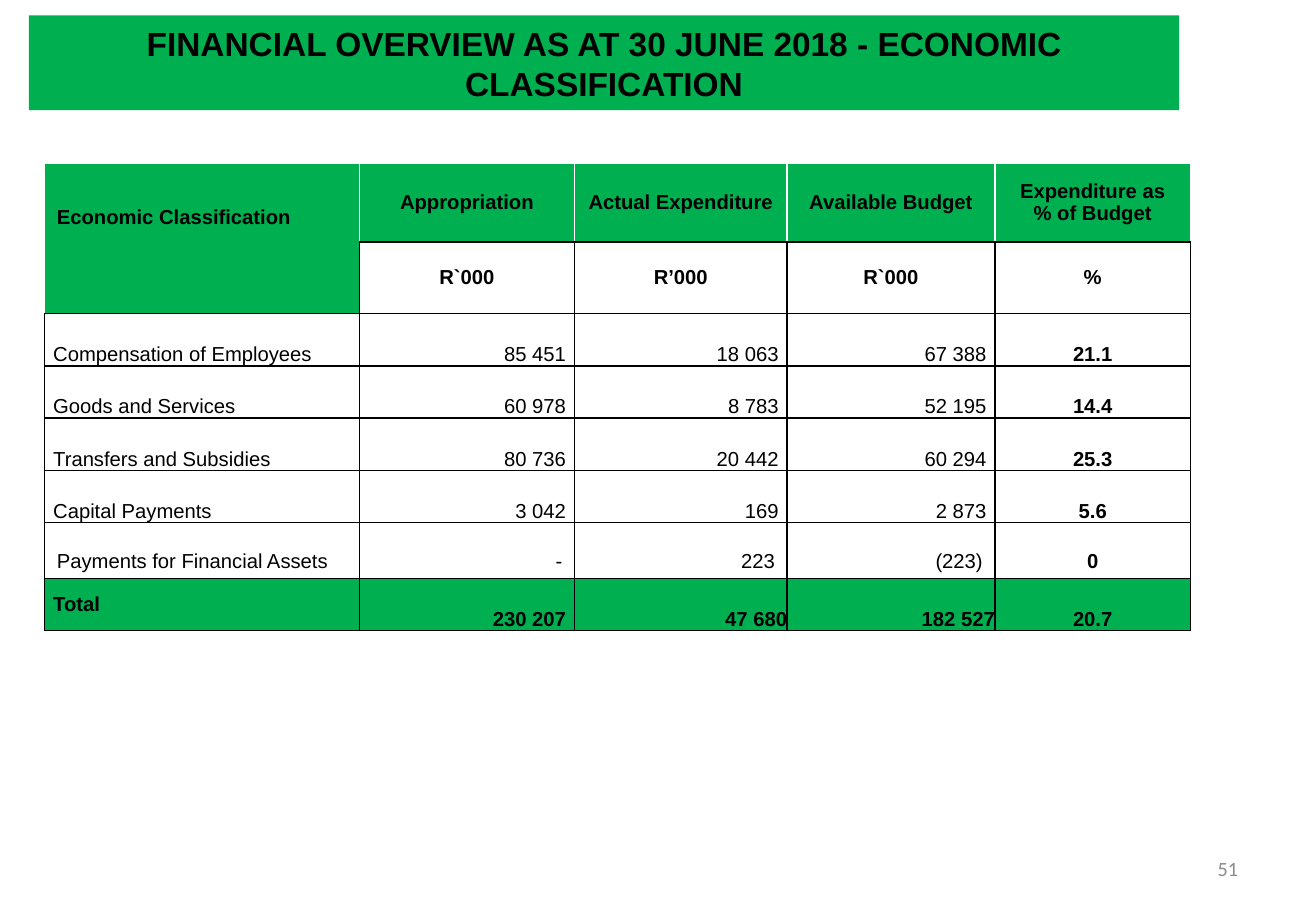
from lxml import etree
from pptx import Presentation, util as u
from pptx.dml.color import RGBColor
from pptx.enum import shapes, text
from pptx.oxml.ns import qn

WIDTH, HEIGHT = 10.83, 7.5
COLORS = {"green": "00B050", "black": "000000", "white": "FFFFFF", "gray": "8C8C8C"}
COLUMNS = [2.59, 1.77, 1.75, 1.71, 1.61]
ROWS = [0.65, 0.59, 0.43, 0.43, 0.43, 0.43, 0.46, 0.43]
HEADER, UNITS, ASSETS, TOTAL = 0, 1, 6, 7
BUDGET = [
    ["Economic Classification", "Appropriation", "Actual Expenditure",
     "Available Budget", "Expenditure as\n% of Budget"],
    ["", "R`000", "R’000", "R`000", "%"],
    ["Compensation of Employees", "85 451", "18 063", "67 388", "21.1"],
    ["Goods and Services", "60 978", "8 783", "52 195", "14.4"],
    ["Transfers and Subsidies", "80 736", "20 442", "60 294", "25.3"],
    ["Capital Payments", "3 042", "169", "2 873", "5.6"],
    ["Payments for Financial Assets", "-", "223", "(223)", "0"],
    ["Total", "230 207", "47 680", "182 527", "20.7"],
]
ALIGN, ANCHOR = text.PP_ALIGN, text.MSO_ANCHOR


def color(name):
    """Return a named colour."""
    return RGBColor.from_string(COLORS[name])


def place(left, top, width, height):
    """Turn shares of the slide into lengths."""
    return [u.Inches(share * side) for share, side in
            zip((left, top, width, height), (WIDTH, HEIGHT, WIDTH, HEIGHT))]


def write(frame, words, size, align, font="Arial", bold=False, ink="black"):
    """Write one paragraph, a run for each line."""
    para = frame.paragraphs[0]
    para.alignment = align
    for index, line in enumerate(words.split("\n")):
        if index:
            para.add_line_break()
        span = para.add_run()
        span.text = line
        span.font.name, span.font.size, span.font.bold = font, u.Pt(size), bold
        span.font.color.rgb = color(ink)


def add_title(page, words):
    """Add the green title band."""
    band = page.shapes.add_shape(shapes.MSO_SHAPE.RECTANGLE,
                                 *place(0.022, 0.017, 0.874, 0.104))
    band.shadow.inherit = False
    band.fill.solid()
    band.fill.fore_color.rgb = color("green")
    band.line.fill.background()
    band.text_frame.word_wrap = True
    band.text_frame.vertical_anchor = ANCHOR.MIDDLE
    write(band.text_frame, words, 19.8, ALIGN.CENTER, bold=True)


def add_page_number(page, number):
    """Add the page number at the lower right."""
    box = page.shapes.add_textbox(*place(0.717, 0.927, 0.233, 0.053))
    box.text_frame.word_wrap = True
    box.text_frame.vertical_anchor = ANCHOR.MIDDLE
    write(box.text_frame, number, 12, ALIGN.RIGHT, "Calibri", ink="gray")


def add_borders(cell, row, col):
    """Rule a cell in black, with white around the header."""
    for side in "LRTB":
        white = (row == HEADER and side != "B") or (
            row == UNITS and col == 0 and side == "L")
        line = etree.SubElement(cell._tc.get_or_add_tcPr(), qn(f"a:ln{side}"),
                                w=str(u.Pt(1)))
        fill = etree.SubElement(line, qn("a:solidFill"))
        etree.SubElement(fill, qn("a:srgbClr"),
                         val=COLORS["white" if white else "black"])


def set_margins(cell, row, col):
    """Set the insets of a cell."""
    side, bottom = 0.07, 0
    if row == HEADER and col == 0:
        side, bottom = 0.1, 0.35
    elif row == ASSETS:
        side, bottom = 0.1, 0.05
    elif row == TOTAL and col > 1:
        side = 0
    cell.margin_left = cell.margin_right = u.Inches(side)
    cell.margin_top, cell.margin_bottom = 0, u.Inches(bottom)


def fill_cell(cell, row, col, words):
    """Rule, fill and write one table cell."""
    add_borders(cell, row, col)
    if row in (HEADER, TOTAL):
        cell.fill.solid()
        cell.fill.fore_color.rgb = color("green")
    else:
        cell.fill.background()
    set_margins(cell, row, col)
    middle = row <= UNITS or (row == TOTAL and col == 0)
    cell.vertical_anchor = ANCHOR.MIDDLE if middle else ANCHOR.BOTTOM
    if col == 0:
        align = ALIGN.JUSTIFY
    elif row <= UNITS or col == len(COLUMNS) - 1:
        align = ALIGN.CENTER
    else:
        align = ALIGN.RIGHT
    bold = row in (HEADER, UNITS, TOTAL) or col == len(COLUMNS) - 1
    if words:
        write(cell.text_frame, words, 12, align, bold=bold)


def add_budget_table(page):
    """Add the table of spending by economic class."""
    area = place(0.034, 0.179, sum(COLUMNS) / WIDTH, sum(ROWS) / HEIGHT)
    table = page.shapes.add_table(len(ROWS), len(COLUMNS), *area).table
    table.first_row = table.horz_banding = False
    for column, width in zip(table.columns, COLUMNS):
        column.width = u.Inches(width)
    for line, height in zip(table.rows, ROWS):
        line.height = u.Inches(height)
    for row, entries in enumerate(BUDGET):
        for col, words in enumerate(entries):
            fill_cell(table.cell(row, col), row, col, words)
    table.cell(HEADER, 0).merge(table.cell(UNITS, 0))


def main():
    """Build and save the deck."""
    deck = Presentation()
    deck.slide_width, deck.slide_height = u.Inches(WIDTH), u.Inches(HEIGHT)
    page = deck.slides.add_slide(deck.slide_layouts[6])
    add_page_number(page, "51")
    add_title(page, "FINANCIAL OVERVIEW AS AT 30 JUNE 2018 - ECONOMIC CLASSIFICATION")
    add_budget_table(page)
    deck.save("out.pptx")


if __name__ == "__main__":
    main()
